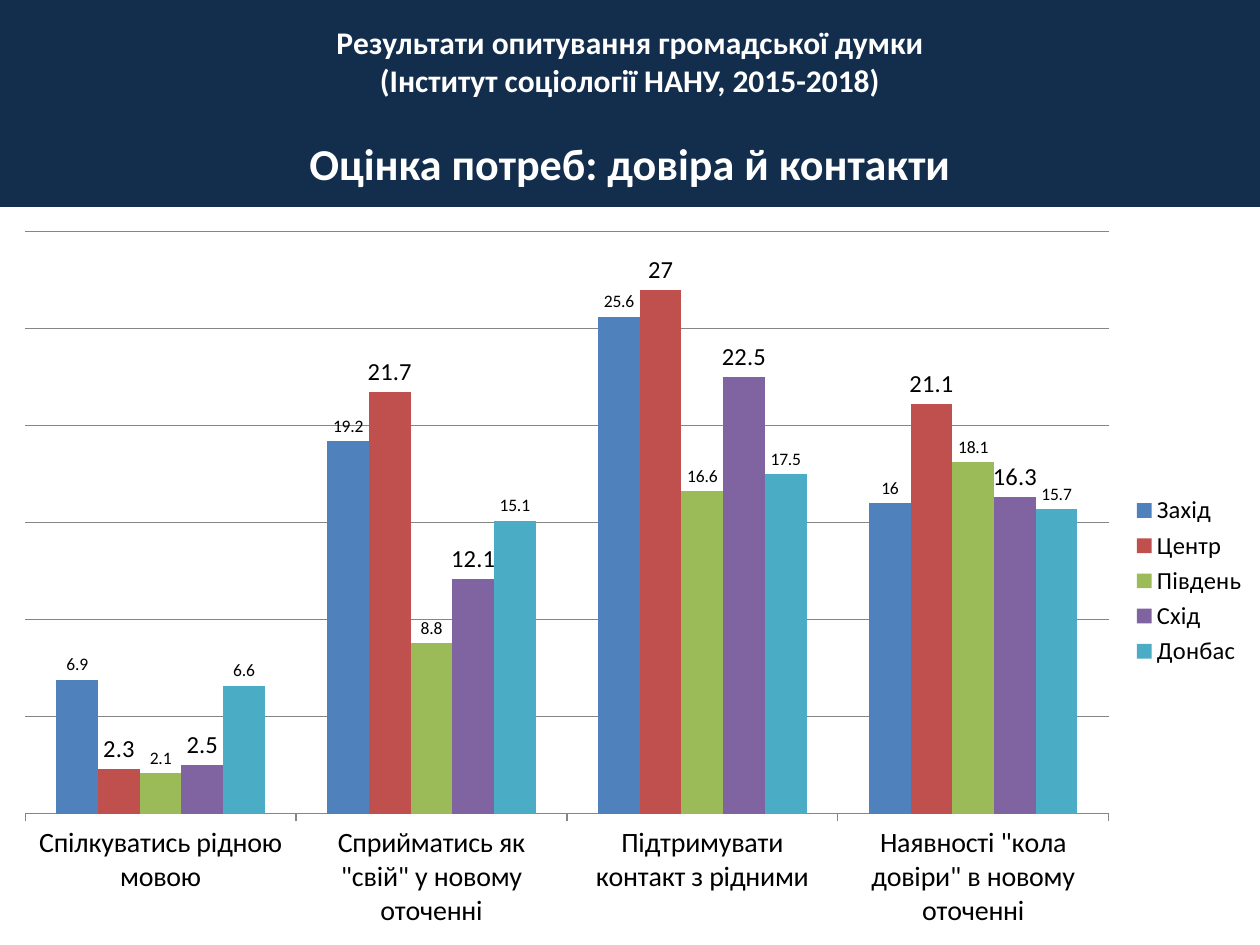
from pptx import Presentation
from pptx.chart.data import CategoryChartData
from pptx.dml.color import RGBColor
from pptx.enum.chart import (XL_CHART_TYPE, XL_LABEL_POSITION,
                             XL_LEGEND_POSITION, XL_TICK_LABEL_POSITION,
                             XL_TICK_MARK)
from pptx.enum.text import MSO_ANCHOR, MSO_AUTO_SIZE, PP_ALIGN
from pptx.oxml import parse_xml
from pptx.oxml.ns import nsdecls, qn
from pptx.util import Cm, Pt

COLUMN = XL_CHART_TYPE.COLUMN_CLUSTERED
OUTER = XL_LABEL_POSITION.OUTSIDE_END
RIGHT = XL_LEGEND_POSITION.RIGHT
LOW = XL_TICK_LABEL_POSITION.LOW
OUT, NONE = XL_TICK_MARK.OUTSIDE, XL_TICK_MARK.NONE
TOP, CENTER, FIXED = MSO_ANCHOR.TOP, PP_ALIGN.CENTER, MSO_AUTO_SIZE.NONE

FONT = "Calibri"
COLORS = {
    "navy": "132D4D", "white": "FFFFFF", "black": "000000", "grid": "868686",
    "Захід": "4F81BD", "Центр": "C0504D", "Південь": "9BBB59",
    "Схід": "8064A2", "Донбас": "4BACC6",
}
LINES = [
    ("Pезультати опитування громадської думки", 18, 0),
    ("(Інститут соціології НАНУ, 2015-2018)", 18, 0),
    ("Оцінка потреб: довіра й контакти", 25.2, 21.6),
]
NEEDS = [
    "Спілкуватись рідною мовою",
    "Сприйматись як \"свій\" у новому оточенні",
    "Підтримувати контакт з рідними",
    "Наявності \"кола довіри\" в новому оточенні",
]
REGIONS = [
    ("Захід", (6.9, 19.2, 25.6, 16), 10),
    ("Центр", (2.3, 21.7, 27, 21.1), 14),
    ("Південь", (2.1, 8.8, 16.6, 18.1), 10),
    ("Схід", (2.5, 12.1, 22.5, 16.3), 14),
    ("Донбас", (6.6, 15.1, 17.5, 15.7), 10),
]
PLOT = {"x": 0.02, "y": 0.02, "w": 0.86, "h": 0.8}


def color(name):
    return RGBColor.from_string(COLORS[name])


def style(font, size, tint="black", bold=False):
    font.name = FONT
    font.size = Pt(size)
    font.bold = bold
    font.color.rgb = color(tint)


def add_title(slide, left, top, width, height):
    title = slide.shapes.title
    title.left, title.top, title.width, title.height = left, top, width, height
    title.fill.solid()
    title.fill.fore_color.rgb = color("navy")
    frame = title.text_frame
    frame.auto_size = FIXED
    frame.word_wrap = True
    frame.vertical_anchor = TOP
    frame.margin_top = Cm(0.46)
    for i, (text, size, gap) in enumerate(LINES):
        para = frame.add_paragraph() if i else frame.paragraphs[0]
        para.alignment = CENTER
        para.space_before = Pt(gap)
        run = para.add_run()
        run.text = text
        style(run.font, size, "white", True)


def place_plot(chart):
    area = chart.element.find(".//" + qn("c:plotArea"))
    for old in area.findall(qn("c:layout")):
        area.remove(old)
    sizes = "".join(f'<c:{k} val="{v}"/>' for k, v in PLOT.items())
    area.insert(0, parse_xml(
        f'<c:layout {nsdecls("c")}><c:manualLayout>'
        '<c:layoutTarget val="inner"/><c:xMode val="edge"/>'
        f'<c:yMode val="edge"/>{sizes}</c:manualLayout></c:layout>'))


def add_chart(slide, left, top, width, height):
    data = CategoryChartData(number_format="General")
    data.categories = NEEDS
    for name, vals, _ in REGIONS:
        data.add_series(name, vals)
    chart = slide.shapes.add_chart(
        COLUMN, left, top, width, height, data).chart
    chart.has_title = False
    style(chart.font, 10)
    place_plot(chart)

    chart.has_legend = True
    chart.legend.position = RIGHT
    chart.legend.include_in_layout = False
    style(chart.legend.font, 14)

    base = chart.category_axis
    base.major_tick_mark = OUT
    base.minor_tick_mark = NONE
    base.tick_label_position = LOW
    base.format.line.color.rgb = color("grid")
    style(base.tick_labels.font, 16)

    scale = chart.value_axis
    scale.minimum_scale, scale.maximum_scale, scale.major_unit = 0, 30, 5
    scale.has_major_gridlines = True
    scale.major_gridlines.format.line.color.rgb = color("grid")
    scale.visible = False

    plot = chart.plots[0]
    plot.gap_width, plot.overlap = 150, 0
    plot.vary_by_categories = False
    for bars, (name, _, size) in zip(plot.series, REGIONS):
        bars.format.fill.solid()
        bars.format.fill.fore_color.rgb = color(name)
        bars.invert_if_negative = False
        marks = bars.data_labels
        marks.show_value = True
        marks.position = OUTER
        style(marks.font, size)


def main():
    deck = Presentation()
    deck.slide_width, deck.slide_height = Cm(25.4), Cm(19.05)
    slide = deck.slides.add_slide(deck.slide_layouts[5])
    head, start = Cm(4.17), Cm(4.37)
    add_title(slide, 0, 0, deck.slide_width, head)
    add_chart(slide, 0, start, deck.slide_width, deck.slide_height - start)
    deck.save("out.pptx")


if __name__ == "__main__":
    main()
